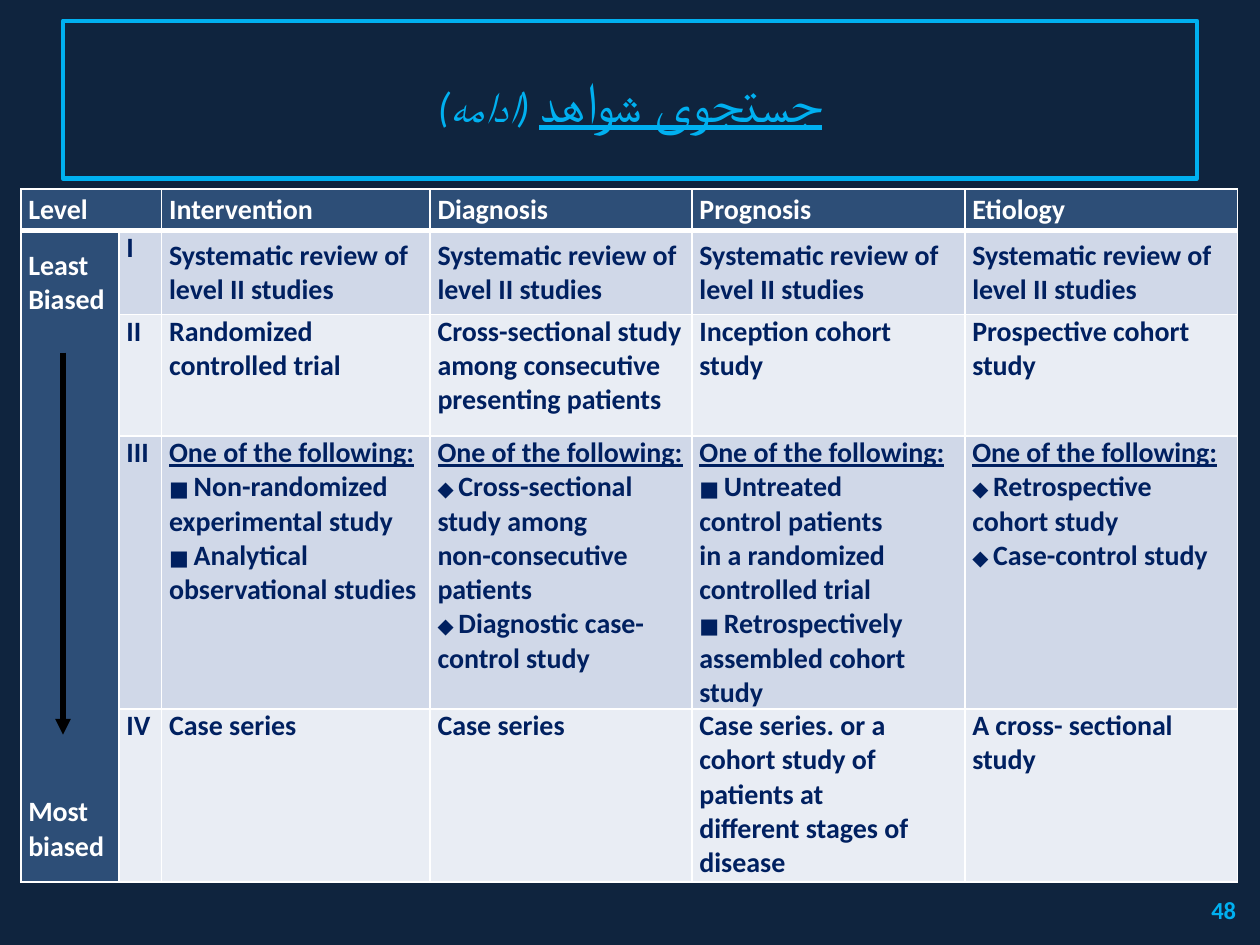
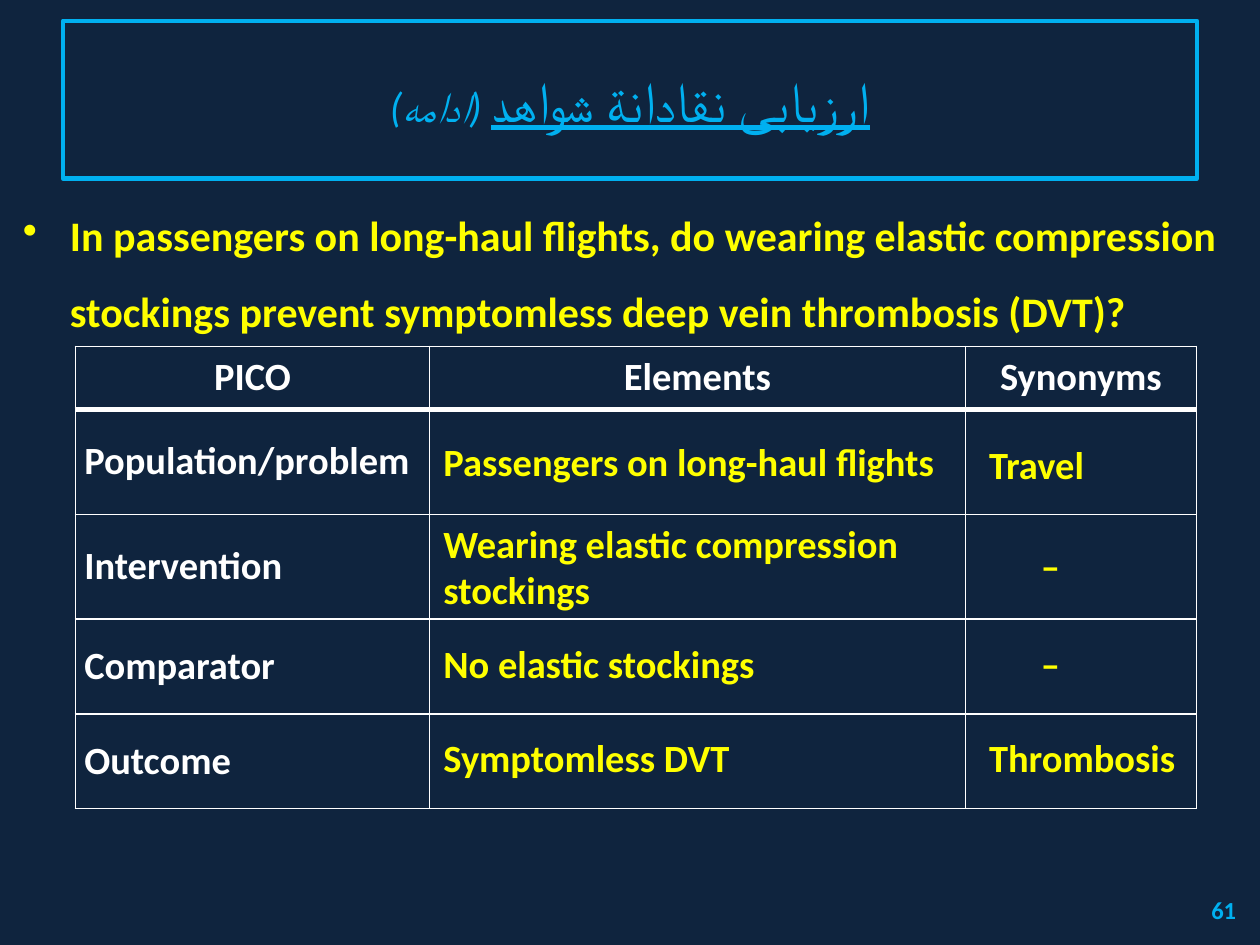
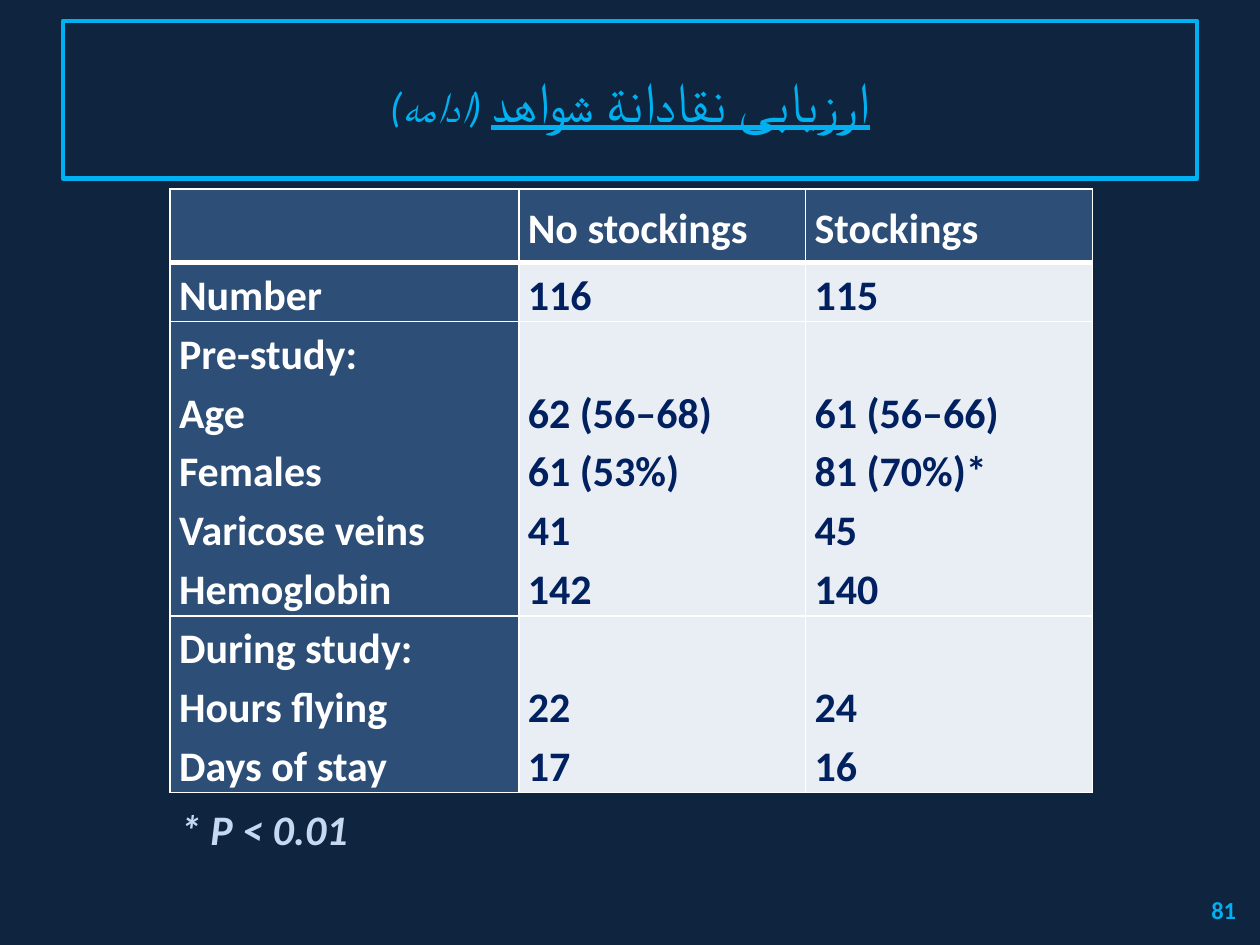
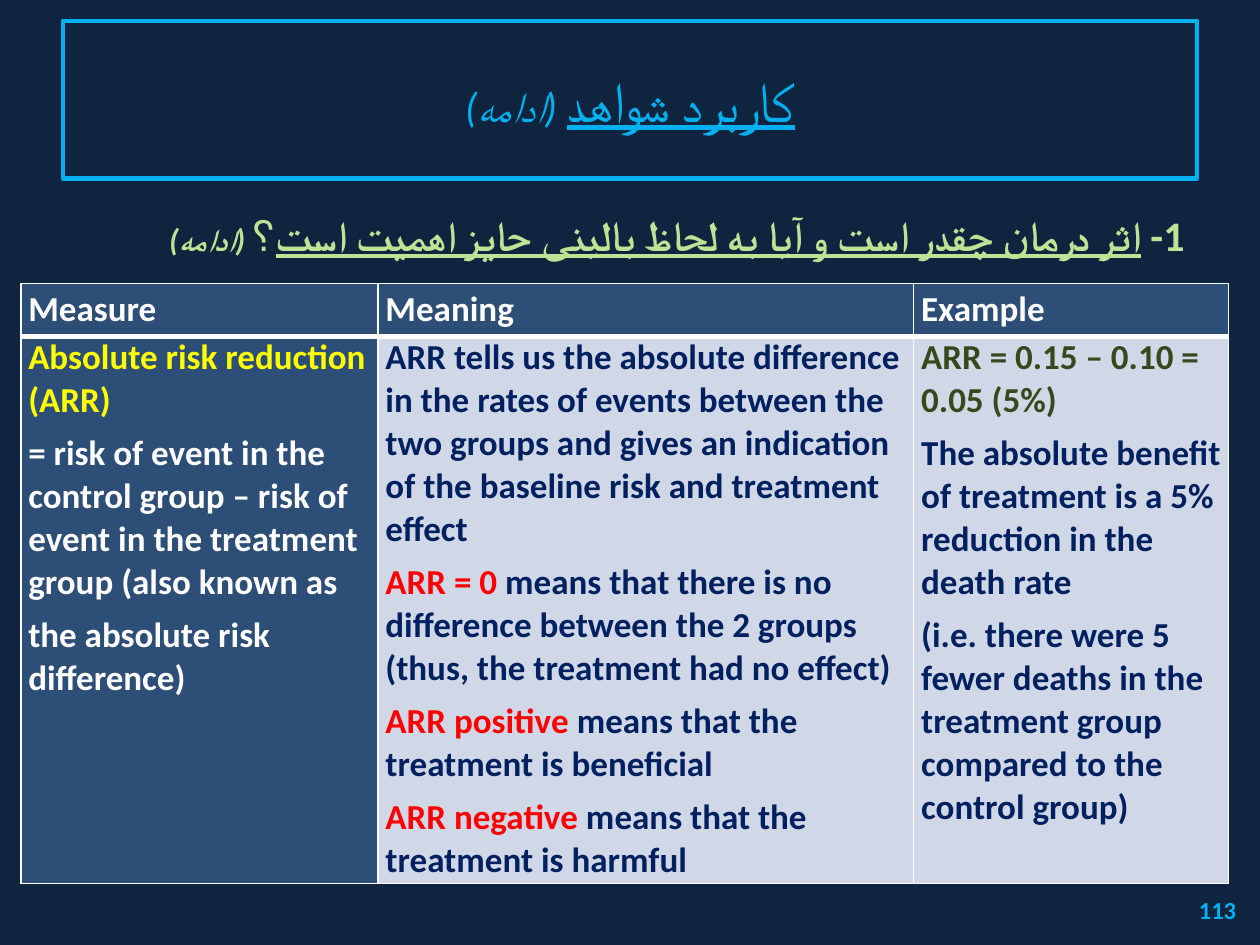
from dataclasses import dataclass, replace
from typing import NamedTuple

from lxml import etree
from pptx import Presentation
from pptx.dml.color import RGBColor
from pptx.enum.shapes import MSO_CONNECTOR
from pptx.enum.text import MSO_ANCHOR, PP_ALIGN
from pptx.oxml.ns import qn
from pptx.util import Cm, Pt

LEFT, CENTER, RIGHT, JUSTIFY = PP_ALIGN.LEFT, PP_ALIGN.CENTER, PP_ALIGN.RIGHT, PP_ALIGN.JUSTIFY
TOP, MIDDLE, BOTTOM = MSO_ANCHOR.TOP, MSO_ANCHOR.MIDDLE, MSO_ANCHOR.BOTTOM
STRAIGHT = MSO_CONNECTOR.STRAIGHT
FONT = "Calibri"
TITLE_ONLY = 5

COLORS = {
    "background": "0F243E",
    "accent": "00B0F0",
    "header": "2D4E77",
    "band_dark": "D0D8E8",
    "band_light": "E9EDF4",
    "white": "FFFFFF",
    "black": "000000",
    "navy": "002060",
    "yellow": "FFFF00",
    "red": "FF0000",
    "olive": "39471D",
    "lime": "BEE395",
    "pale": "C6D9F1",
}


class Run(NamedTuple):
    text: str
    color: str | None = None
    size: float | None = None
    underline: bool | None = None
    italic: bool | None = None


class Box(NamedTuple):
    left: float
    top: float
    width: float
    height: float


class Grid(NamedTuple):
    left: float
    top: float
    cols: tuple
    rows: tuple
    margin: float


class Label(NamedTuple):
    box: Box
    text: str
    align: PP_ALIGN = LEFT


@dataclass(frozen=True)
class Style:
    size: float
    color: str
    bold: bool = True
    italic: bool = False
    align: PP_ALIGN = LEFT
    rtl: bool = False
    line_spacing: float | None = None
    after: float = 0


TITLE_BOX = Box(1.27, 0.42, 22.86, 3.18)
NUMBER_BOX = Box(19.25, 17.83, 5.92, 1.02)
TITLE = Style(32, "accent", bold=False, align=CENTER, rtl=True)
NUMBER = Style(14, "accent", align=RIGHT, rtl=True)


def rgb(name: str) -> RGBColor:
    return RGBColor.from_string(COLORS[name])


def write(tf, paras, style: Style) -> None:
    for i, para in enumerate(paras):
        p = tf.add_paragraph() if i else tf.paragraphs[0]
        p.alignment = style.align
        p.space_before = Pt(0)
        p.space_after = Pt(style.after)
        if style.line_spacing:
            p.line_spacing = style.line_spacing
        p.font.name = FONT
        p.font.size = Pt(style.size)
        p.font.bold = style.bold
        p.font.italic = style.italic
        p.font.color.rgb = rgb(style.color)
        if style.rtl:
            pPr = p._p.get_or_add_pPr()
            pPr.set("rtl", "1")
            etree.SubElement(pPr.find(qn("a:defRPr")), qn("a:cs"), typeface=FONT)
        for run in (Run(para),) if isinstance(para, str) else para:
            r = p.add_run()
            r.text = run.text
            if run.color:
                r.font.color.rgb = rgb(run.color)
            if run.size:
                r.font.size = Pt(run.size)
            if run.underline is not None:
                r.font.underline = run.underline
            if run.italic is not None:
                r.font.italic = run.italic


def add_text(s, box: Box, paras, style: Style, anchor=TOP, wrap: bool = True):
    tf = s.shapes.add_textbox(*map(Cm, box)).text_frame
    tf.word_wrap = wrap
    tf.vertical_anchor = anchor
    write(tf, paras, style)
    return tf


def add_slide(prs, title: str, number: str):
    s = prs.slides.add_slide(prs.slide_layouts[TITLE_ONLY])
    sp = s.shapes.title
    sp.left, sp.top, sp.width, sp.height = map(Cm, TITLE_BOX)
    sp.line.color.rgb = rgb("accent")
    sp.line.width = Pt(2.5)
    sp.text_frame.vertical_anchor = MIDDLE
    runs = (Run(title, size=32, underline=True), Run(" (ادامه)", size=24, italic=True))
    write(sp.text_frame, [runs], TITLE)
    add_text(s, NUMBER_BOX, [number], NUMBER, MIDDLE)
    return s


def set_borders(cell, row: int) -> None:
    tcPr = cell._tc.get_or_add_tcPr()
    thick = {0: "lnB", 1: "lnT"}.get(row)
    for side in ("lnL", "lnR", "lnT", "lnB"):
        width = Pt(3 if side == thick else 1)
        ln = etree.SubElement(tcPr, qn(f"a:{side}"), w=str(width))
        fill = etree.SubElement(ln, qn("a:solidFill"))
        etree.SubElement(fill, qn("a:srgbClr"), val=COLORS["white"])


def add_grid(s, grid: Grid):
    shape = s.shapes.add_table(
        len(grid.rows), len(grid.cols), Cm(grid.left), Cm(grid.top),
        Cm(sum(grid.cols)), Cm(sum(grid.rows)))
    table = shape.table
    table.horz_banding = False
    for column, width in zip(table.columns, grid.cols):
        column.width = Cm(width)
    for i, height in enumerate(grid.rows):
        table.rows[i].height = Cm(height)
        for cell in table.rows[i].cells:
            cell.margin_left = cell.margin_right = Cm(grid.margin)
            cell.margin_top = cell.margin_bottom = 0
            set_borders(cell, i)
            cell.fill.background()
    return table


def fill_cell(cell, paras, style: Style, fill: str | None = None, anchor=MIDDLE) -> None:
    cell.vertical_anchor = anchor
    if fill:
        cell.fill.solid()
        cell.fill.fore_color.rgb = rgb(fill)
    write(cell.text_frame, paras, style)


def fill_header(table, names, style: Style, fill: str | None = None, start: int = 0) -> None:
    for j, name in enumerate(names, start):
        fill_cell(table.cell(0, j), [name] if name else [], style, fill)


def following(mark: str, *items) -> list:
    paras = [(Run("One of the following:", underline=True),)]
    for first, *rest in items:
        paras += [(Run(f"{mark} ", size=12), Run(first)), *rest]
    return paras


def levels_slide(prs) -> None:
    s = add_slide(prs, "جستجوی شواهد", "48")
    grid = Grid(0.42, 3.81, (1.98, 0.86, 5.41, 5.28, 5.5, 5.5), (0.84, 1.69, 2.45, 5.5, 3.49), 0.15)
    table = add_grid(s, grid)
    head = Style(16, "white")
    body = Style(16, "navy")

    table.cell(0, 0).merge(table.cell(0, 1))
    fill_header(table, ("Level",), head, "header")
    fill_header(table, ("Intervention", "Diagnosis", "Prognosis", "Etiology"), head, "header", 2)
    bias = table.cell(1, 0)
    bias.merge(table.cell(4, 0))
    fill_cell(bias, ["Least", "Biased", "Most", "biased"], head, "header")
    bias.text_frame.paragraphs[2].space_before = Pt(273)

    rows = (
        ("I", [["Systematic review of level II studies"]] * 4),
        ("II", [
            ["Randomized controlled trial"],
            ["Cross-sectional study among consecutive presenting patients"],
            ["Inception cohort study"],
            ["Prospective cohort study"],
        ]),
        ("III", [
            following("■", ["Non-randomized experimental study"],
                      ["Analytical observational studies"]),
            following("◆", ["Cross-sectional", "study among", "non-consecutive", "patients"],
                      ["Diagnostic case-control study"]),
            following("■", ["Untreated", "control patients", "in a randomized", "controlled trial"],
                      ["Retrospectively assembled cohort study"]),
            following("◆", ["Retrospective cohort study"], ["Case-control study"]),
        ]),
        ("IV", [
            ["Case series"],
            ["Case series"],
            ["Case series. or a cohort study of patients at", "different stages of disease"],
            ["A cross- sectional study"],
        ]),
    )
    for i, (level, studies) in enumerate(rows, 1):
        band = "band_dark" if i % 2 else "band_light"
        fill_cell(table.cell(i, 1), [level], body, band, TOP)
        for j, paras in enumerate(studies, 2):
            fill_cell(table.cell(i, j), paras, body, band, MIDDLE if i == 1 else TOP)

    arrow = s.shapes.add_connector(STRAIGHT, Cm(1.27), Cm(7.11), Cm(1.27), Cm(14.81))
    arrow.line.color.rgb = rgb("black")
    arrow.line.width = Pt(3)
    etree.SubElement(arrow.line._get_or_add_ln(), qn("a:tailEnd"), type="triangle")
    etree.SubElement(arrow._element.spPr, qn("a:effectLst"))


def pico_slide(prs) -> None:
    s = add_slide(prs, "ارزيابی نقادانة شواهد", "61")
    question = Style(24, "yellow", line_spacing=1.5, after=6)
    tf = add_text(s, Box(0.21, 3.6, 24.77, 3.18), [
        "In passengers on long-haul flights, do wearing elastic compression stockings "
        "prevent symptomless deep vein thrombosis (DVT)?"], question)
    pPr = tf.paragraphs[0]._p.get_or_add_pPr()
    pPr.set("marL", str(Cm(0.95)))
    pPr.set("indent", str(-Cm(0.95)))
    bullet = etree.Element(qn("a:buChar"), char="•")
    pPr.find(qn("a:defRPr")).addprevious(bullet)

    grid = Grid(1.52, 6.98, (7.14, 10.8, 4.66), (1.27, 2.12, 2.11, 1.91, 1.91), 0.18)
    table = add_grid(s, grid)
    head = Style(22, "white")
    fill_header(table, ("PICO", "Elements", "Synonyms"), replace(head, align=CENTER))
    elements = ("Population/problem", "Intervention", "Comparator", "Outcome")
    for i, element in enumerate(elements, 1):
        fill_cell(table.cell(i, 0), [element], head)

    element_left, synonym_left, line = 8.69, 19.69, 1.19
    labels = (
        Label(Box(element_left, 8.71, 10.59, line), "Passengers on long-haul flights"),
        Label(Box(synonym_left, 8.76, 3.81, line), "Travel"),
        Label(Box(element_left, 10.36, 10.16, 2.13), "Wearing elastic compression stockings"),
        Label(Box(synonym_left, 10.8, 2.97, line), "–", CENTER),
        Label(Box(element_left, 12.78, 10.59, line), "No elastic stockings"),
        Label(Box(synonym_left, 12.78, 2.97, line), "–", CENTER),
        Label(Box(element_left, 14.68, 7.42, line), "Symptomless DVT"),
        Label(Box(synonym_left, 14.68, 4.45, line), "Thrombosis"),
    )
    for label in labels:
        add_text(s, label.box, [label.text], Style(22, "yellow", align=label.align))


def baseline_slide(prs) -> None:
    s = add_slide(prs, "ارزيابی نقادانة شواهد", "81")
    grid = Grid(3.43, 3.81, (7.03, 5.78, 5.78), (1.48, 1.19, 5.94, 3.56), 0.18)
    table = add_grid(s, grid)
    head = Style(24, "white", line_spacing=1.15)
    body = replace(head, color="navy")
    fill_header(table, ("", "No stockings", "Stockings"), head, "header")
    rows = (
        (["Number"], ["116"], ["115"]),
        (["Pre-study:", "Age", "Females", "Varicose veins", "Hemoglobin"],
         ["62 (56–68)", "61 (53%)", "41", "142"],
         ["61 (56–66)", "81 (70%)*", "45", "140"]),
        (["During study:", "Hours flying", "Days of stay"], ["22", "17"], ["24", "16"]),
    )
    for i, (names, *groups) in enumerate(rows, 1):
        fill_cell(table.cell(i, 0), names, head, "header")
        for j, values in enumerate(groups, 1):
            fill_cell(table.cell(i, j), values, body, "band_light", BOTTOM)
    note = Style(24, "pale", italic=True)
    add_text(s, Box(3.38, 16.08, 3.89, 1.27), ["* P < 0.01"], note, wrap=False)


def arr_slide(prs) -> None:
    s = add_slide(prs, "کاربرد شواهد", "113")
    question = Style(24, "lime", align=RIGHT, rtl=True, line_spacing=1.5, after=6)
    add_text(s, Box(1.27, 3.6, 22.86, 2.34), [(
        Run("1- "),
        Run("اثر درمان چقدر است و آیا به لحاظ بالینی حايز اهميت است", underline=True),
        Run("؟"),
        Run(" (ادامه)", size=18, italic=True),
    )], question)

    table = add_grid(s, Grid(0.42, 5.72, (7.2, 10.8, 6.35), (1.06, 11.03), 0.15))
    head = Style(20, "white", after=6)
    body = replace(head, color="navy")
    fill_header(table, ("Measure", "Meaning", "Example"), replace(head, align=JUSTIFY), "header")
    fill_cell(table.cell(1, 0), [
        (Run("Absolute risk reduction (ARR)", "yellow"),),
        "= risk of event in the control group – risk of event in the treatment group (also known as",
        "the absolute risk difference)",
    ], head, "header", TOP)
    fill_cell(table.cell(1, 1), [
        "ARR tells us the absolute difference in the rates of events between the two groups "
        "and gives an indication of the baseline risk and treatment effect",
        (Run("ARR = 0 ", "red"), Run("means that there is no difference between the 2 groups "
                                     "(thus, the treatment had no effect)")),
        (Run("ARR positive ", "red"), Run("means that the treatment is beneficial")),
        (Run("ARR negative ", "red"), Run("means that the treatment is harmful")),
    ], body, "band_dark", TOP)
    fill_cell(table.cell(1, 2), [
        (Run("ARR = 0.15 – 0.10 = 0.05 (5%)", "olive"),),
        "The absolute benefit of treatment is a 5% reduction in the death rate",
        "(i.e. there were 5 fewer deaths in the treatment group compared to the control group)",
    ], body, "band_dark", TOP)


def main() -> None:
    prs = Presentation()
    prs.slide_width, prs.slide_height = Cm(25.4), Cm(19.05)
    fill = prs.slide_master.background.fill
    fill.solid()
    fill.fore_color.rgb = rgb("background")
    for build in (levels_slide, pico_slide, baseline_slide, arr_slide):
        build(prs)
    prs.save("out.pptx")


if __name__ == "__main__":
    main()
